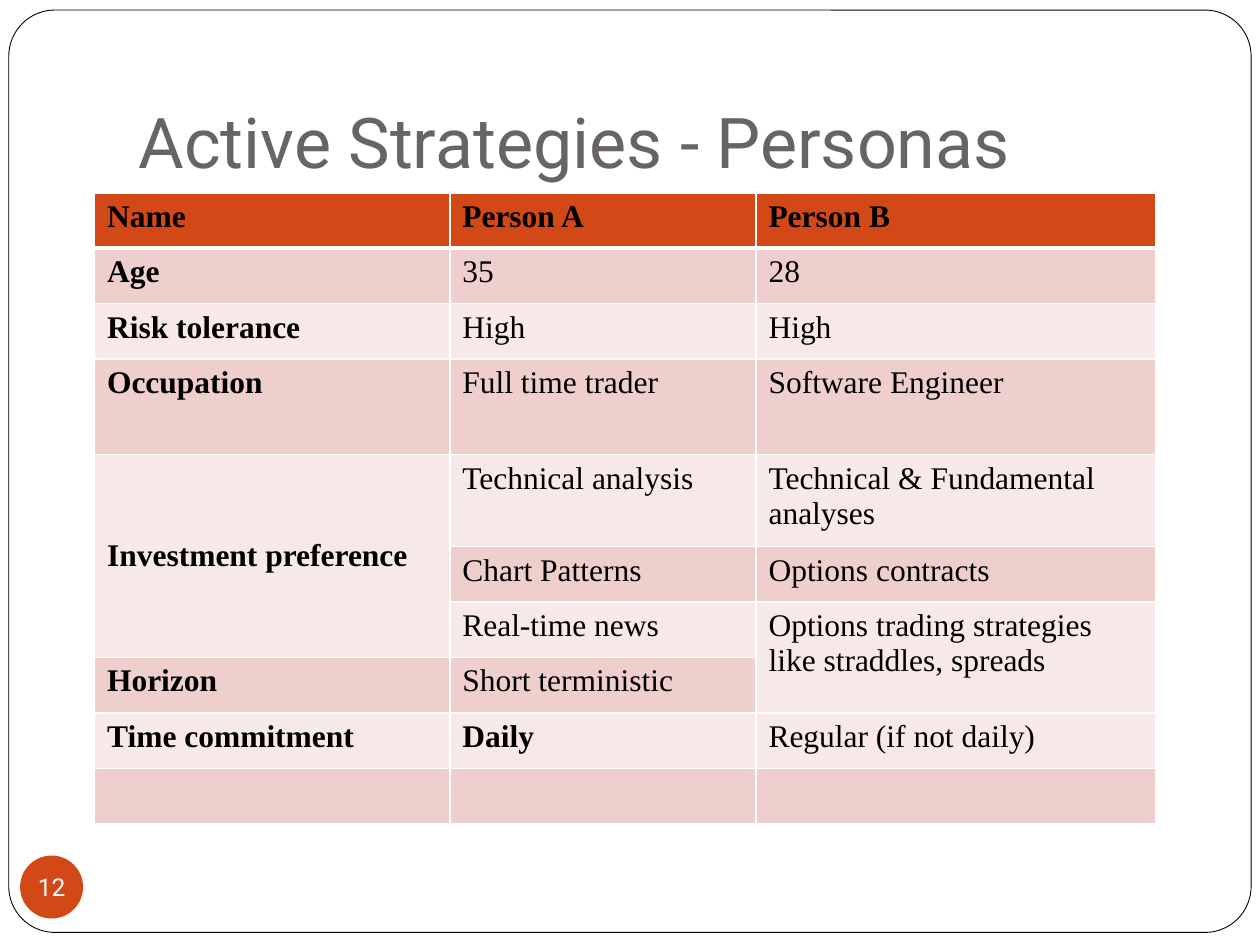
from typing import NamedTuple

import pptx
import pptx.dml.color
import pptx.enum.shapes
import pptx.enum.text
import pptx.oxml
import pptx.oxml.ns
import pptx.util

Inches = pptx.util.Inches
Pt = pptx.util.Pt
RGBColor = pptx.dml.color.RGBColor
Shape = pptx.enum.shapes.MSO_SHAPE
Anchor = pptx.enum.text.MSO_ANCHOR
Align = pptx.enum.text.PP_ALIGN

WHITE = RGBColor(0xFF, 0xFF, 0xFF)
BLACK = RGBColor(0x00, 0x00, 0x00)
GRAY = RGBColor(0x69, 0x64, 0x64)
ORANGE = RGBColor(0xD3, 0x48, 0x17)
ROSE = RGBColor(0xEF, 0xCF, 0xCC)
PALE_ROSE = RGBColor(0xF7, 0xE9, 0xE8)

COLUMN_WIDTHS = (2.82, 2.43, 3.17)
ROW_HEIGHT = 0.44


class PersonaRow(NamedTuple):
    label: str
    person_a: str
    person_b: str
    height: float = ROW_HEIGHT


class Merge(NamedTuple):
    column: int
    first_row: int
    last_row: int


ROWS = (
    PersonaRow("Name", "Person A", "Person B"),
    PersonaRow("Age", "35", "28"),
    PersonaRow("Risk tolerance", "High", "High"),
    PersonaRow("Occupation", "Full time trader", "Software Engineer", 0.76),
    PersonaRow("Investment preference", "Technical analysis",
               "Technical & Fundamental analyses", 0.73),
    PersonaRow("", "Chart Patterns", "Options contracts"),
    PersonaRow("", "Real-time news",
               "Options trading strategies like straddles, spreads"),
    PersonaRow("Horizon", "Short terministic", ""),
    PersonaRow("Time commitment", "Daily", "Regular (if not daily)"),
    PersonaRow("", "", ""),
)
MERGES = (Merge(0, 4, 6), Merge(2, 6, 7))
BOLD_VALUES = {"Daily"}


def write_text(frame, text: str, *, size: float, font: str, color: RGBColor,
               bold: bool = False, align=Align.LEFT) -> None:
    para = frame.paragraphs[0]
    para.alignment = align
    span = para.add_run()
    span.text = text
    span.font.size = Pt(size)
    span.font.name = font
    span.font.bold = bold
    span.font.color.rgb = color


def add_plain_shape(page, kind, left: float, top: float, width: float,
                    height: float, fill: RGBColor):
    box = page.shapes.add_shape(kind, Inches(left), Inches(top),
                                Inches(width), Inches(height))
    box.shadow.inherit = False
    box.fill.solid()
    box.fill.fore_color.rgb = fill
    box.line.fill.background()
    return box


def set_margins(frame, left: float, top: float, right: float, bottom: float) -> None:
    frame.margin_left, frame.margin_top = Inches(left), Inches(top)
    frame.margin_right, frame.margin_bottom = Inches(right), Inches(bottom)


def add_borders(cell, widths: dict[str, float]) -> None:
    """Draw white cell borders; the lines must come before the cell's fill."""
    properties = cell._tc.get_or_add_tcPr()
    for side, width in widths.items():
        properties.append(pptx.oxml.parse_xml(
            f'<a:ln{side} {pptx.oxml.ns.nsdecls("a")} w="{Pt(width)}">'
            f'<a:solidFill><a:srgbClr val="{WHITE}"/></a:solidFill></a:ln{side}>'))


def add_persona_table(page) -> None:
    table = page.shapes.add_table(
        len(ROWS), len(COLUMN_WIDTHS), Inches(0.75), Inches(1.53),
        Inches(sum(COLUMN_WIDTHS)), Inches(sum(row.height for row in ROWS))).table
    for column, width in zip(table.columns, COLUMN_WIDTHS):
        column.width = Inches(width)

    for r, row in enumerate(ROWS):
        table.rows[r].height = Inches(row.height)
        header = r == 0
        fill = ORANGE if header else ROSE if r % 2 else PALE_ROSE
        for c, text in enumerate((row.label, row.person_a, row.person_b)):
            cell = table.cell(r, c)
            add_borders(cell, {"L": 1, "R": 1, "T": 3 if r == 1 else 1,
                               "B": 3 if header else 1})
            cell.fill.solid()
            cell.fill.fore_color.rgb = fill
            if text:
                write_text(cell.text_frame, text, size=18,
                           font="Times New Roman", color=BLACK,
                           bold=header or c == 0 or text in BOLD_VALUES)

    for merge in MERGES:
        table.cell(merge.first_row, merge.column).merge(
            table.cell(merge.last_row, merge.column))
    table.cell(4, 0).vertical_anchor = Anchor.MIDDLE


def main() -> None:
    deck = pptx.Presentation()
    deck.slide_width, deck.slide_height = Inches(10), Inches(7.5)
    page = deck.slides.add_slide(deck.slide_layouts.get_by_name("Title Only"))

    # Title
    title = page.shapes.title
    title.left, title.top = Inches(1), Inches(0.3)
    title.width, title.height = Inches(8.5), Inches(1.25)
    title.text_frame.vertical_anchor = Anchor.BOTTOM
    title.text_frame.auto_size = pptx.enum.text.MSO_AUTO_SIZE.NONE
    set_margins(title.text_frame, 0.1, 0.05, 0.1, 0.1)
    write_text(title.text_frame, "Active Strategies - Personas", size=40,
               font="Roboto", color=GRAY)

    # Rounded page frame, behind the title
    frame = add_plain_shape(page, Shape.ROUNDED_RECTANGLE, 0.07, 0.08, 9.86, 7.32, WHITE)
    frame.adjustments[0] = 0.05
    frame.line.color.rgb = BLACK
    frame.line.width = Pt(0.5)
    title._element.addprevious(frame._element)

    # Page number badge
    badge = add_plain_shape(page, Shape.OVAL, 0.16, 6.79, 0.5, 0.5, ORANGE)
    badge.text_frame.word_wrap = False
    badge.text_frame.vertical_anchor = Anchor.MIDDLE
    set_margins(badge.text_frame, 0, 0, 0, 0)
    write_text(badge.text_frame, "12", size=14, font="Roboto", color=WHITE,
               align=Align.CENTER)

    # Persona comparison
    add_persona_table(page)
    deck.save("out.pptx")


if __name__ == "__main__":
    main()
